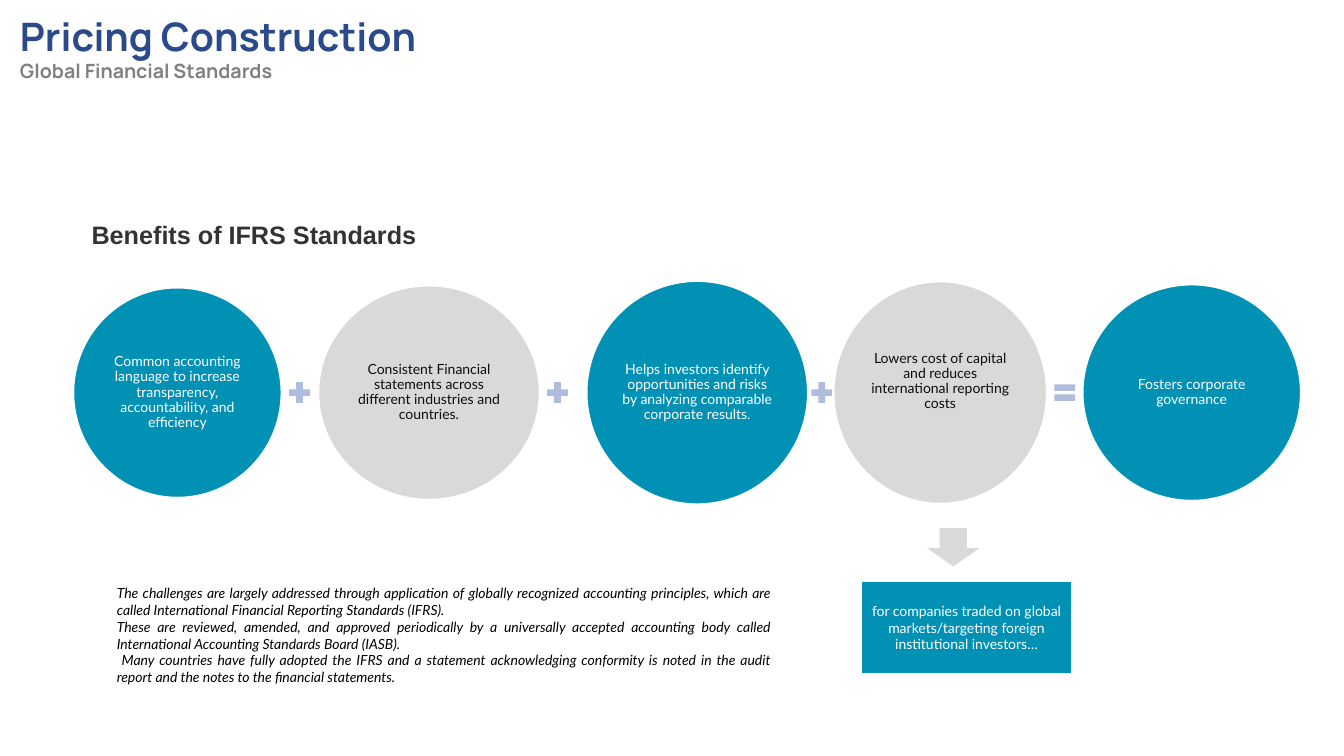
import pptx
import pptx.dml.color
import pptx.enum.shapes
import pptx.enum.text
import pptx.util

SHAPE = pptx.enum.shapes.MSO_SHAPE
ALIGN = pptx.enum.text.PP_ALIGN
ANCHOR = pptx.enum.text.MSO_ANCHOR
AUTO_SIZE = pptx.enum.text.MSO_AUTO_SIZE

COLORS = {
    "teal": "0091B5",
    "grey": "D9D9D9",
    "lilac": "B0BCDE",
    "navy": "2A4A8B",
    "subtitle": "808080",
    "heading": "333333",
    "ink": "0D0D0D",
    "black": "000000",
    "white": "FFFFFF",
}


class SlideBuilder:
    """Holds the style and the page; lengths are columns and rows of the grid."""

    cell = 0.1  # inches per column and per row

    def __init__(self, deck):
        self.page = deck.slides.add_slide(deck.slide_layouts[6])

    def span(self, *cells):
        return [pptx.util.Inches(count * self.cell) for count in cells]

    def color(self, name):
        return pptx.dml.color.RGBColor.from_string(COLORS[name])

    def fill_text(self, frame, lines, size, color, font="Lato", bold=None,
                  italic=None, align=None, spacing=None):
        frame.word_wrap = True
        for index, line in enumerate(lines):
            para = frame.add_paragraph() if index else frame.paragraphs[0]
            para.text = line
            para.alignment = align
            para.line_spacing = spacing
            para.font.name = font
            para.font.size = pptx.util.Pt(size)
            para.font.bold = bold
            para.font.italic = italic
            para.font.color.rgb = self.color(color)

    def text(self, at, lines, size, color, **style):
        box = self.page.shapes.add_textbox(*self.span(*at))
        self.fill_text(box.text_frame, lines, size, color, **style)
        box.text_frame.auto_size = AUTO_SIZE.SHAPE_TO_FIT_TEXT
        return box

    def shape(self, kind, at, fill, outlined=True):
        shape = self.page.shapes.add_shape(kind, *self.span(*at))
        shape.shadow.inherit = False
        shape.fill.solid()
        shape.fill.fore_color.rgb = self.color(fill)
        if outlined:
            shape.line.color.rgb = self.color("white")
            shape.line.width = pptx.util.Pt(1)
        else:
            shape.line.fill.background()
        return shape

    def label(self, shape, line, color, spacing=None):
        shape.text_frame.vertical_anchor = ANCHOR.MIDDLE
        self.fill_text(shape.text_frame, [line], 10, color,
                       align=ALIGN.CENTER, spacing=spacing)

    def circle(self, left, middle, width, height, line, fill, color, lift=0):
        at = (left, middle - height / 2, width, height)
        shape = self.shape(SHAPE.OVAL, at, fill)
        self.label(shape, line, color, spacing=0.9)
        frame = shape.text_frame
        frame.margin_left, frame.margin_right, frame.margin_top, frame.margin_bottom = \
            self.span(0.1, 0.1, 0.1, 0.1 + 2 * lift)

    def operator(self, kind, left, middle, size=2.8):
        at = (left, middle - size / 2, size, size)
        self.shape(kind, at, "lilac", outlined=False)


def main():
    deck = pptx.Presentation()
    deck.slide_width = pptx.util.Inches(13.33)
    deck.slide_height = pptx.util.Inches(7.5)
    slide = SlideBuilder(deck)

    # Benefit circles: left, width, height, lift of the text, wording
    middle = 38.95
    benefits = [
        (7.3, 20.6, 20.8, 0, "Common accounting language to increase "
         "transparency, accountability, and efficiency"),
        (31.6, 21.9, 21.2, 0, "Consistent Financial statements across "
         "different industries and countries."),
        (58.2, 21.9, 22.1, 0, "Helps investors identify opportunities and "
         "risks by analyzing comparable corporate results."),
        (82.7, 21.1, 22, 1.1, "Lowers cost of capital and reduces "
         "international reporting costs"),
        (107.4, 21.6, 21.4, 0, "Fosters corporate governance"),
    ]
    looks = [("teal", "white"), ("grey", "ink")]
    for index, (left, width, height, lift, line) in enumerate(benefits):
        fill, color = looks[index % 2]
        slide.circle(left, middle, width, height, line, fill, color, lift)

    # Signs between the circles
    for left in (28.3, 53.9, 80.1):
        slide.operator(SHAPE.MATH_PLUS, left, middle)
    slide.operator(SHAPE.MATH_EQUAL, 104.2, middle)

    # Note below the fourth circle
    note = slide.shape(SHAPE.RECTANGLE, (85.4, 57.7, 20.9, 9.1), "teal")
    slide.label(note, "for companies traded on global markets/targeting "
                "foreign institutional investors…", "white")
    slide.shape(SHAPE.DOWN_ARROW, (91.7, 52.3, 5.7, 4), "grey")

    # Title, subtitle and heading
    title = slide.text((1, 0.7, 105.3, 10.4),
                       ["Pricing Construction", "Global Financial Standards"],
                       28, "navy", font="Manrope", bold=True)
    subtitle = title.text_frame.paragraphs[1]
    subtitle.font.size = pptx.util.Pt(14)
    subtitle.font.color.rgb = slide.color("subtitle")
    slide.text((8.1, 21.3, 37.4, 4), ["Benefits of IFRS Standards"], 18,
               "heading", font="Arial", bold=True)

    # Explanation
    slide.text((10.6, 57.5, 66.8, 11.1), [
        "The challenges are largely addressed through application of globally "
        "recognized accounting principles, which are called International "
        "Financial Reporting Standards (IFRS).",
        "These are reviewed, amended, and approved periodically by a "
        "universally accepted accounting body called International Accounting "
        "Standards Board (IASB).",
        " Many countries have fully adopted the IFRS and a statement "
        "acknowledging conformity is noted in the audit report and the notes "
        "to the financial statements.",
    ], 10, "black", italic=True, align=ALIGN.JUSTIFY)

    deck.save("out.pptx")


if __name__ == "__main__":
    main()
